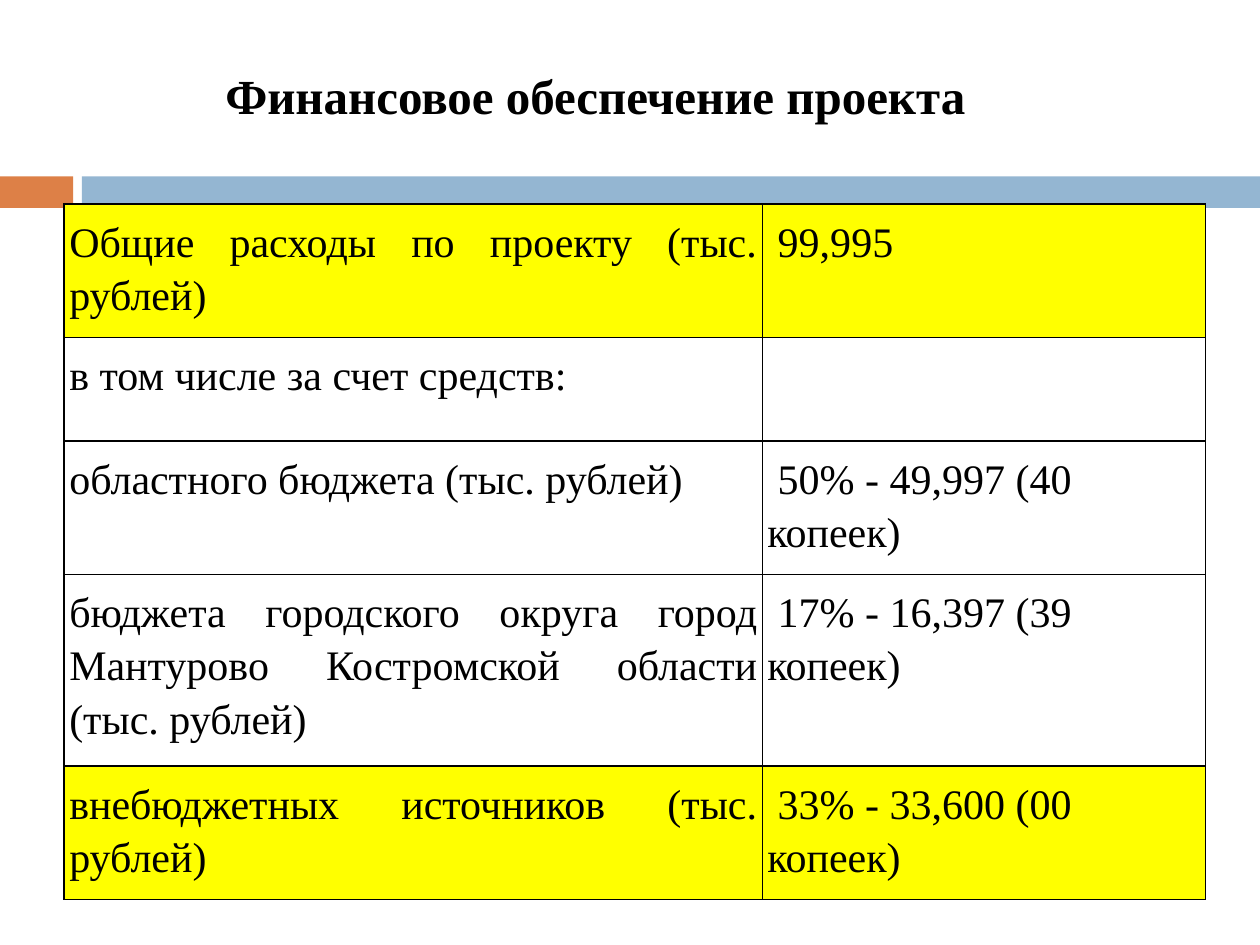
from lxml import etree
from pptx import Presentation
from pptx.dml.color import RGBColor
from pptx.enum.shapes import MSO_SHAPE as Shape
from pptx.enum.text import MSO_ANCHOR as Anchor, PP_ALIGN as Align
from pptx.oxml.ns import qn
from pptx.util import Inches, Pt

# Content
TITLE = "Финансовое обеспечение проекта"
ROWS = [  # label, value, highlighted, height
    ("Общие расходы по проекту (тыс. рублей)", " 99,995", True, 1.06),
    ("в том числе за счет средств:", "", False, 0.82),
    ("областного бюджета (тыс. рублей)", " 50% - 49,997 (40 копеек)", False, 1.06),
    ("бюджета городского округа город Мантурово Костромской области (тыс. рублей)",
     " 17% - 16,397 (39 копеек)", False, 1.52),
    ("внебюджетных источников (тыс. рублей)", " 33% - 33,600 (00 копеек)", True, 1.06),
]
COLUMNS = [5.54, 3.52]
BANDS = [(0, 0.58, "DD8047"), (0.65, 9.35, "94B6D2")]  # left, width, colour
FONT, BLACK, YELLOW = "Times New Roman", "000000", "FFFF00"


def color(value):
    return RGBColor.from_string(value)


def write(frame, text, size, align, bold=False, spacing=1.0):
    paragraph = frame.paragraphs[0]
    paragraph.alignment = align
    paragraph.line_spacing = spacing
    run = paragraph.add_run()
    run.text = text
    run.font.name, run.font.size, run.font.bold = FONT, Pt(size), bold
    run.font.color.rgb = color(BLACK)


def set_borders(cell):
    properties = cell._tc.get_or_add_tcPr()
    for index, side in enumerate(("lnL", "lnR", "lnT", "lnB")):
        line = etree.Element(qn(f"a:{side}"), w=str(Pt(1)))
        fill = etree.SubElement(line, qn("a:solidFill"))
        etree.SubElement(fill, qn("a:srgbClr"), val=BLACK)
        properties.insert(index, line)


presentation = Presentation()
presentation.slide_width, presentation.slide_height = Inches(10), Inches(7.5)
slide = presentation.slides.add_slide(presentation.slide_layouts[5])

# Title
title = slide.shapes.title
title.left, title.top, title.width, title.height = map(Inches, (1.22, 0.44, 7.01, 0.88))
title.text_frame.vertical_anchor = Anchor.TOP
title.text_frame.margin_top = Inches(0.08)
write(title.text_frame, TITLE, 28, Align.CENTER, bold=True)

# Coloured bands under the title
for left, width, fill in BANDS:
    band = slide.shapes.add_shape(Shape.RECTANGLE, *map(Inches, (left, 1.4, width, 0.25)))
    band.fill.solid()
    band.fill.fore_color.rgb = color(fill)
    band.line.fill.background()
    band.shadow.inherit = False

# Budget table
table_height = sum(row[-1] for row in ROWS)
table = slide.shapes.add_table(
    len(ROWS), len(COLUMNS),
    *map(Inches, (0.51, 1.62, sum(COLUMNS), table_height))).table
table.first_row = table.horz_banding = False
for column, width in zip(table.columns, COLUMNS):
    column.width = Inches(width)

for row, (label, value, highlighted, height) in zip(table.rows, ROWS):
    row.height = Inches(height)
    for cell, text, align in zip(row.cells, (label, value), (Align.JUSTIFY, Align.LEFT)):
        cell.margin_left = cell.margin_right = Inches(0.04)
        cell.margin_top = cell.margin_bottom = Inches(0.07)
        if highlighted:
            cell.fill.solid()
            cell.fill.fore_color.rgb = color(YELLOW)
        else:
            cell.fill.background()
        set_borders(cell)
        if text:
            write(cell.text_frame, text, 24, align, spacing=1.15)

presentation.save("out.pptx")
